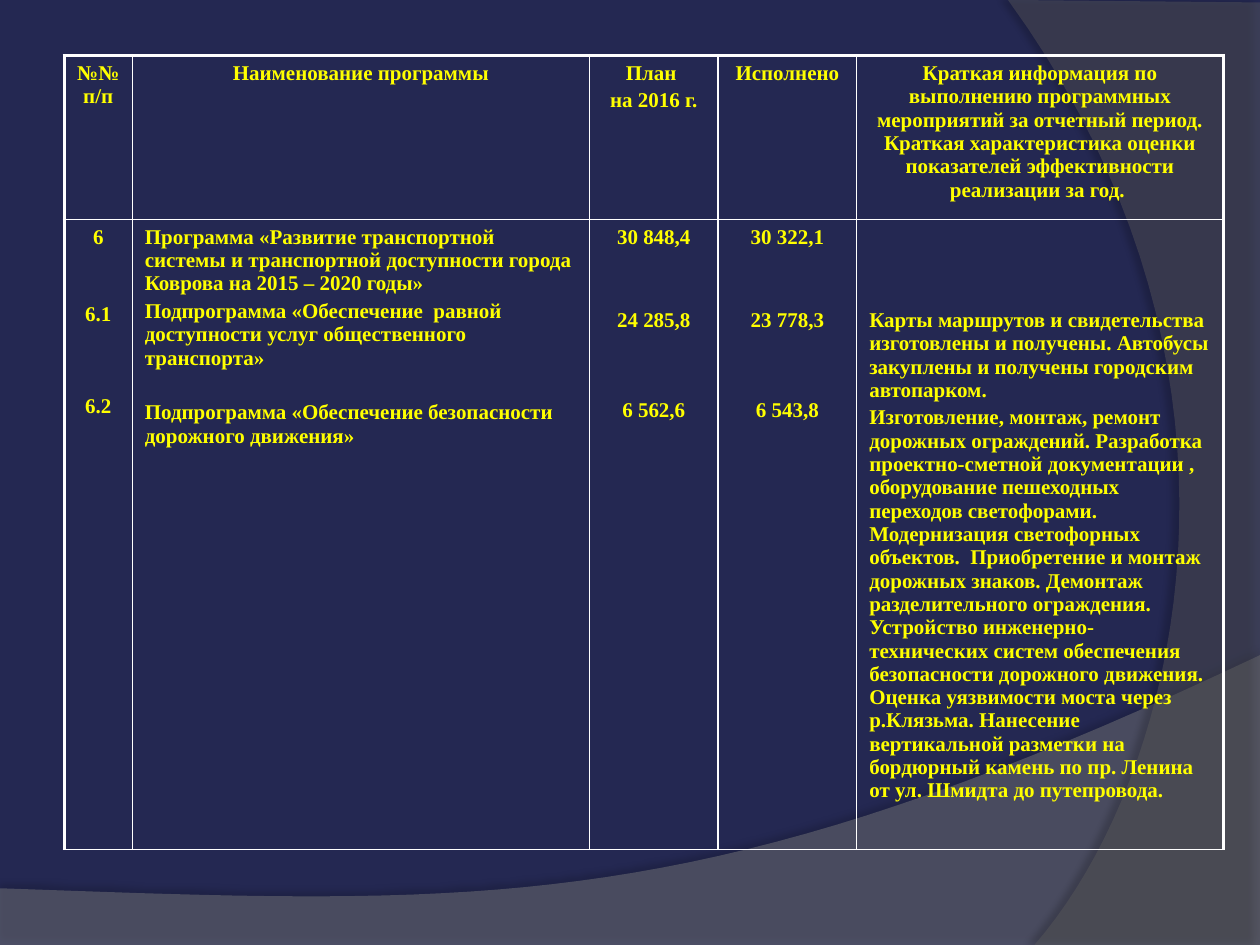
from lxml import etree
from pptx import Presentation
from pptx import util as u
from pptx.dml.color import RGBColor
from pptx.enum import text
from pptx.oxml import ns

HEADERS = [
    ["№№ п/п"],
    ["Наименование программы"],
    ["План ", "на 2016 г."],
    ["Исполнено"],
    ["Краткая информация по выполнению программных мероприятий за отчетный период. "
     "Краткая характеристика оценки показателей эффективности реализации за год. "],
]
PROGRAMS = [
    ["6", "6.1", "6.2"],
    ["Программа «Развитие транспортной системы и транспортной доступности города "
     "Коврова на 2015 – 2020 годы»",
     "Подпрограмма «Обеспечение  равной доступности услуг общественного транспорта»",
     "Подпрограмма «Обеспечение безопасности дорожного движения»"],
    ["30 848,4", "24 285,8", "6 562,6"],
    ["30 322,1", "23 778,3", "6 543,8"],
    ["Карты маршрутов и свидетельства изготовлены и получены. Автобусы закуплены и "
     "получены городским автопарком.",
     "Изготовление, монтаж, ремонт дорожных ограждений. Разработка проектно-сметной "
     "документации , оборудование пешеходных переходов светофорами. Модернизация "
     "светофорных объектов.  Приобретение и монтаж дорожных знаков. Демонтаж "
     "разделительного ограждения. Устройство инженерно-технических систем обеспечения "
     "безопасности дорожного движения. Оценка уязвимости моста через р.Клязьма. "
     "Нанесение вертикальной разметки на бордюрный камень по пр. Ленина от ул. Шмидта "
     "до путепровода."],
]
PROGRAM_GAPS = [[0, 31, 39], [0, 2.4, 18], [0, 34, 38.4], [0, 34, 38.4], [0, 2.4]]
COLUMN_WIDTHS = [0.54, 3.63, 1.02, 1.1, 2.91]
ROW_HEIGHTS = [1.3, 5]
CENTERED_COLUMNS = (0, 2, 3)


def color(value):
    return RGBColor.from_string(value)


def curve(start, first, second, end, steps=40):
    points = []
    for step in range(steps + 1):
        t = step / steps
        weights = ((1 - t) ** 3, 3 * t * (1 - t) ** 2, 3 * t * t * (1 - t), t ** 3)
        points.append(tuple(
            sum(weight * point[axis] for weight, point in zip(weights, (start, first, second, end)))
            for axis in (0, 1)))
    return points


class SlideBuilder:
    font_name = "Times New Roman"
    font_size = 12
    font_color = "FFFF00"
    border_color = "FFFFFF"
    thin, thick = 1, 2.25

    def __init__(self, slide):
        self.slide = slide

    def background(self, fill):
        self.slide.background.fill.solid()
        self.slide.background.fill.fore_color.rgb = color(fill)

    def swoosh(self, points, fill, opacity, shadow_opacity, distance, direction):
        start, *rest = [(u.Inches(x), u.Inches(y)) for x, y in points]
        builder = self.slide.shapes.build_freeform(*start)
        builder.add_line_segments(rest, close=True)
        shape = builder.convert_to_shape()
        shape.line.fill.background()
        shape.fill.solid()
        shape.fill.fore_color.rgb = color(fill)
        shape.shadow.inherit = False
        properties = shape.element.spPr
        fill_color = properties.find(ns.qn("a:solidFill"))[0]
        etree.SubElement(fill_color, ns.qn("a:alpha"), val=str(opacity * 1000))
        shadow = etree.SubElement(
            properties.find(ns.qn("a:effectLst")), ns.qn("a:outerShdw"),
            blurRad=str(u.Pt(4)), dist=str(u.Pt(distance)),
            dir=str(direction * 60000), rotWithShape="0")
        shadow_color = etree.SubElement(shadow, ns.qn("a:srgbClr"), val="000000")
        etree.SubElement(shadow_color, ns.qn("a:alpha"), val=str(shadow_opacity * 1000))

    def table(self, left, top, widths, heights):
        frame = self.slide.shapes.add_table(
            len(heights), len(widths), u.Inches(left), u.Inches(top),
            u.Inches(sum(widths)), u.Inches(sum(heights)))
        table = frame.table
        table.first_row = table.horz_banding = False
        for column, width in zip(table.columns, widths):
            column.width = u.Inches(width)
        for row, height in zip(table.rows, heights):
            row.height = u.Inches(height)
        return table

    def borders(self, cell, thick_sides):
        properties = cell._tc.get_or_add_tcPr()
        for side in "LRTB":
            width = self.thick if side in thick_sides else self.thin
            line = etree.SubElement(properties, ns.qn("a:ln" + side), w=str(u.Pt(width)))
            fill = etree.SubElement(line, ns.qn("a:solidFill"))
            etree.SubElement(fill, ns.qn("a:srgbClr"), val=self.border_color)

    def cell(self, cell, lines, gaps, centered, thick_sides):
        self.borders(cell, thick_sides)
        cell.fill.background()
        frame = cell.text_frame
        for index, (line, gap) in enumerate(zip(lines, gaps)):
            paragraph = frame.add_paragraph() if index else frame.paragraphs[0]
            paragraph.alignment = text.PP_ALIGN.CENTER if centered else text.PP_ALIGN.LEFT
            paragraph.space_before = u.Pt(gap)
            run = paragraph.add_run()
            run.text = line
            run.font.name = self.font_name
            run.font.size = u.Pt(self.font_size)
            run.font.bold = True
            run.font.color.rgb = color(self.font_color)


def main():
    presentation = Presentation()
    presentation.slide_width = u.Inches(10)
    presentation.slide_height = u.Inches(7.5)
    builder = SlideBuilder(presentation.slides.add_slide(presentation.slide_layouts[6]))

    builder.background("242852")
    wave = curve((10, 5.2), (5.59, 7.29), (3.91, 7.19), (0, 7.05))
    builder.swoosh([(0, 7.5), (10, 7.5)] + wave, "7F7F7F", 45, 35, 3.5, 270)
    arc = curve((8.21, 7.5), (9.35, 6.19), (10.18, 3), (8, 0))
    builder.swoosh([(10, 0.02), (10, 7.5)] + arc, "5E5E5E", 40, 45, 4, 180)

    table = builder.table(0.51, 0.44, COLUMN_WIDTHS, ROW_HEIGHTS)
    last = len(COLUMN_WIDTHS) - 1
    for column in range(last + 1):
        outer = {0: "L", last: "R"}.get(column, "")
        builder.cell(table.cell(0, column), HEADERS[column], [0, 2.4], True, outer + "T")
        builder.cell(table.cell(1, column), PROGRAMS[column], PROGRAM_GAPS[column],
                     column in CENTERED_COLUMNS, outer)
    table.cell(1, last).margin_top = u.Inches(0.71)

    presentation.save("out.pptx")


if __name__ == "__main__":
    main()
